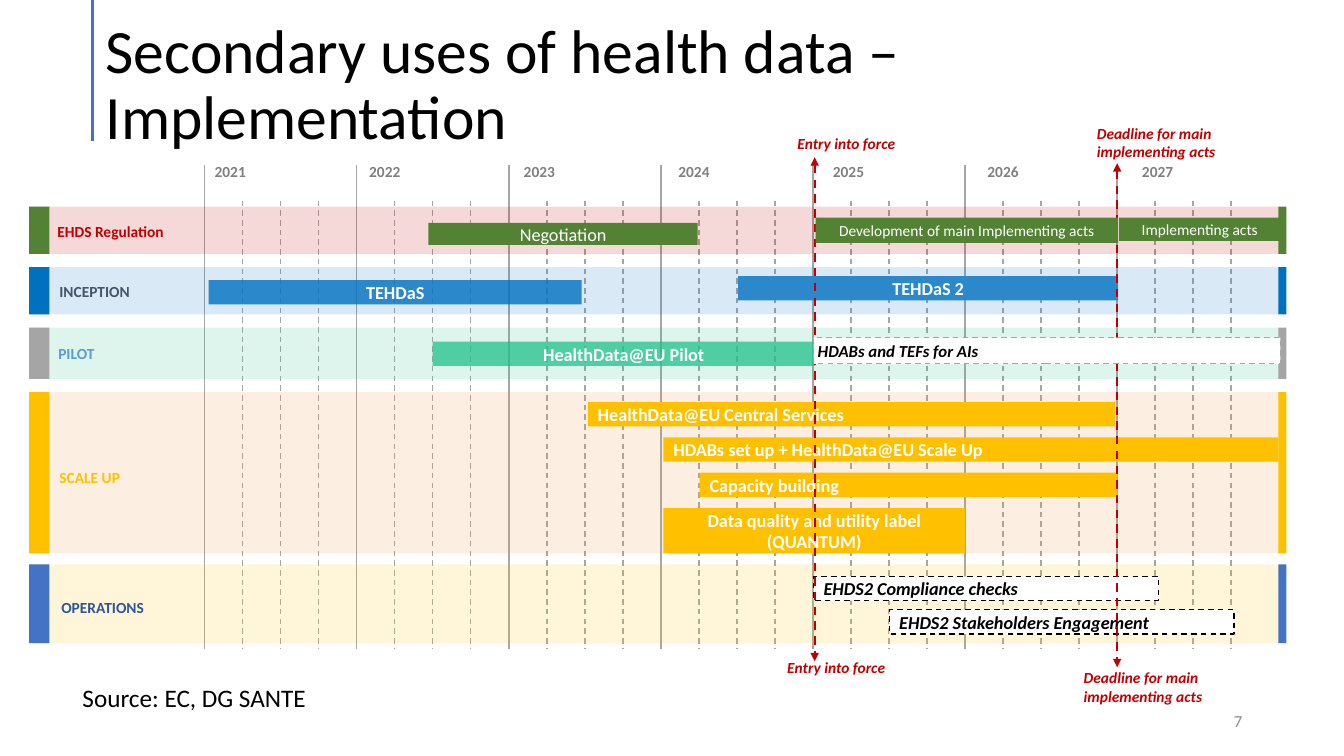
from lxml import etree
from pptx import Presentation
from pptx.dml.color import RGBColor
from pptx.enum import dml, shapes, text
from pptx.oxml import ns
from pptx.util import Inches, Pt

LEFT, CENTER, RIGHT = text.PP_ALIGN.LEFT, text.PP_ALIGN.CENTER, text.PP_ALIGN.RIGHT
TOP, MIDDLE = text.MSO_ANCHOR.TOP, text.MSO_ANCHOR.MIDDLE
INSETS = (0.1, 0.05, 0.1, 0.05)
GREEN, BLUE, TEAL, GOLD = "548235", "0070C0", "1EC08A", "FFC000"
RED, GREY, WHITE, BLACK = "C00000", "A5A5A5", "FFFFFF", "000000"

FIRST_YEAR, YEARS = 2021, 7
GRID_LEFT, GRID_RIGHT, GRID_BOTTOM = 2.03, 11.08, 6.44
QUARTER = (GRID_RIGHT - GRID_LEFT) / (4 * (YEARS - 1))
YEAR_LABEL_STEP = 1.533

PHASES = [
    ("EHDS Regulation", RED, 0.47, 2.15, 1.27, 2.05, 0.47, RED, GREEN),
    ("INCEPTION", "44546A", 0.49, 2.74, 0.91, 2.65, 0.47, BLUE, BLUE),
    ("PILOT", "5B9BD5", 0.48, 3.36, 0.57, 3.25, 0.51, TEAL, GREY),
    ("SCALE UP", GOLD, 0.49, 4.59, 0.81, 3.89, 1.6, "ED8D2F", GOLD),
    ("OPERATIONS", "2F5597", 0.51, 5.88, 1.04, 5.6, 0.78, GOLD, "4472C4"),
]

ACTIVITIES = [
    ("Negotiation", (4.25, 2.21, 2.67, 0.22), GREEN, 100, CENTER, 13, False),
    ("TEHDaS", (2.07, 2.78, 3.7, 0.24), BLUE, 80, CENTER, 13, True),
    ("HealthData@EU Pilot", (4.29, 3.39, 3.79, 0.24), TEAL, 74, CENTER, 13, True),
    ("HDABs set up + HealthData@EU Scale Up", (6.58, 4.34, 6.1, 0.24), GOLD, 100, LEFT, 13, True),
    ("Capacity building", (6.94, 4.69, 4.14, 0.24), GOLD, 100, LEFT, 13, True),
    ("Data quality and utility label (QUANTUM)", (6.58, 5.04, 2.99, 0.45), GOLD, 100, CENTER, 13, True),
    ("TEHDaS 2", (7.32, 2.74, 3.77, 0.24), "2B89CB", 100, CENTER, 13, True),
    ("HealthData@EU Central Services", (5.83, 3.99, 5.23, 0.24), GOLD, 100, LEFT, 13, True),
]

LATE_ACTIVITIES = [
    ("Development of main Implementing acts", (8.09, 2.16, 3, 0.25), GREEN, 100, CENTER, 11, False),
    ("Implementing acts", (11.1, 2.16, 1.6, 0.23), GREEN, 100, CENTER, 11, False),
]

MILESTONES = [
    ("Entry into force", 8.08, 1.56, (7.81, 1.28), (7.71, 6.48), 1.2, 0.29),
    ("Deadline for main\nimplementing acts", 11.08, 1.62, (10.78, 1.18), (10.65, 6.58), 1.39, 0.47),
]


def rgb(color):
    return RGBColor.from_string(color)


def write(frame, words, size=11, color=BLACK, bold=False, italic=False, align=LEFT,
          anchor=TOP, insets=INSETS, wrap=True, spacing=None):
    frame.word_wrap = wrap
    frame.auto_size = text.MSO_AUTO_SIZE.NONE if wrap else text.MSO_AUTO_SIZE.SHAPE_TO_FIT_TEXT
    frame.vertical_anchor = anchor
    frame.margin_left, frame.margin_top, frame.margin_right, frame.margin_bottom = map(Inches, insets)
    paragraph = frame.paragraphs[0]
    paragraph.text = words.replace("\n", "\v")
    paragraph.alignment = align
    if spacing:
        paragraph.line_spacing = spacing
    for run in paragraph.runs:
        run.font.name = "Calibri"
        run.font.size = Pt(size)
        run.font.bold = bold
        run.font.italic = italic
        run.font.color.rgb = rgb(color)


def add_label(slide, words, box, **style):
    label = slide.shapes.add_textbox(*map(Inches, box))
    write(label.text_frame, words, **style)


def add_bar(slide, box, fill, opacity=100, outline=None, words=None, **style):
    bar = slide.shapes.add_shape(shapes.MSO_SHAPE.RECTANGLE, *map(Inches, box))
    bar.shadow.inherit = False
    bar.fill.solid()
    bar.fill.fore_color.rgb = rgb(fill)
    if opacity < 100:
        tint = bar.fill._xPr.find(".//" + ns.qn("a:srgbClr"))
        etree.SubElement(tint, ns.qn("a:alpha"), val=str(opacity * 1000))
    if outline:
        bar.line.color.rgb = rgb(outline)
        bar.line.width = Pt(1)
        bar.line.dash_style = dml.MSO_LINE.DASH
    else:
        bar.line.fill.background()
    if words:
        write(bar.text_frame, words, anchor=MIDDLE, **style)


def add_vertical(slide, x, top, bottom, color, width=1, dashed=False, arrows=False):
    rule = slide.shapes.add_connector(
        shapes.MSO_CONNECTOR.STRAIGHT, Inches(x), Inches(top), Inches(x), Inches(bottom))
    rule.line.color.rgb = rgb(color)
    rule.line.width = Pt(width)
    if dashed:
        rule.line.dash_style = dml.MSO_LINE.DASH
    if arrows:
        for end in ("a:headEnd", "a:tailEnd"):
            etree.SubElement(rule.line._get_or_add_ln(), ns.qn(end), type="triangle")
    etree.SubElement(rule._element.spPr, ns.qn("a:effectLst"))


def add_calendar(slide):
    for quarter in range(4 * YEARS):
        inside_year = quarter % 4 > 0
        add_vertical(slide, GRID_LEFT + quarter * QUARTER, 1.99 if inside_year else 1.64,
                     GRID_BOTTOM, "A6A6A6", dashed=inside_year)
    for year in range(YEARS):
        add_label(slide, str(FIRST_YEAR + year),
                  (GRID_LEFT + year * YEAR_LABEL_STEP, 1.56, 0.52, 0.29),
                  color="808080", bold=True, wrap=False)


def add_phase(slide, name, color, x, y, width, top, height, tint, edge):
    add_bar(slide, (0.29, top, 12.4, height), tint, opacity=15)
    add_bar(slide, (0.29, top, 0.2, height), edge)
    add_bar(slide, (12.68, top, 0.08, height), edge)
    add_label(slide, name, (x, y, width, 0.29), color=color, bold=True, anchor=MIDDLE, wrap=False)


def add_activities(slide, activities):
    for words, box, fill, opacity, align, size, bold in activities:
        add_bar(slide, box, fill, opacity, words=words, color=WHITE, align=align, size=size, bold=bold)


def add_milestone(slide, words, x, top, upper, lower, width, height):
    add_vertical(slide, x, top, top + 5, RED, width=1.5, dashed=True, arrows=True)
    for corner in (upper, lower):
        add_label(slide, words, (*corner, width, height), color=RED, bold=True, italic=True, wrap=False)


def main():
    deck = Presentation()
    deck.slide_width, deck.slide_height = Inches(13.33), Inches(7.5)
    slide = deck.slides.add_slide(deck.slide_layouts[6])

    add_vertical(slide, 0.92, 0, 1.4, "4472C4", width=2.25)
    add_label(slide, "7", (9.42, 6.95, 3, 0.4), size=12, color="8C8C8C", align=RIGHT, anchor=MIDDLE)
    add_label(slide, "Secondary uses of health data – Implementation", (0.95, 0.15, 11.5, 0.86),
              size=44, insets=(0.1, 0.05, 0.1, 0), spacing=0.9)
    add_calendar(slide)
    for phase in PHASES:
        add_phase(slide, *phase)
    add_activities(slide, ACTIVITIES)

    planned = dict(outline=BLACK, size=13, bold=True, italic=True)
    add_bar(slide, (8.82, 6.05, 3.42, 0.24), WHITE, words="EHDS2 Stakeholders Engagement", **planned)
    add_bar(slide, (8.07, 5.72, 3.42, 0.24), WHITE, words="EHDS2 Compliance checks", **planned)
    for milestone in MILESTONES:
        add_milestone(slide, *milestone)
    add_bar(slide, (8.07, 3.35, 4.63, 0.26), WHITE, outline=GREY, words="HDABs and TEFs for AIs",
            size=12, bold=True, italic=True, insets=(0.04, 0.08, 0, 0.08))
    add_activities(slide, LATE_ACTIVITIES)
    add_label(slide, "Source: EC, DG SANTE", (0.72, 6.72, 2.44, 0.4), size=18, wrap=False)
    deck.save("out.pptx")


if __name__ == "__main__":
    main()
